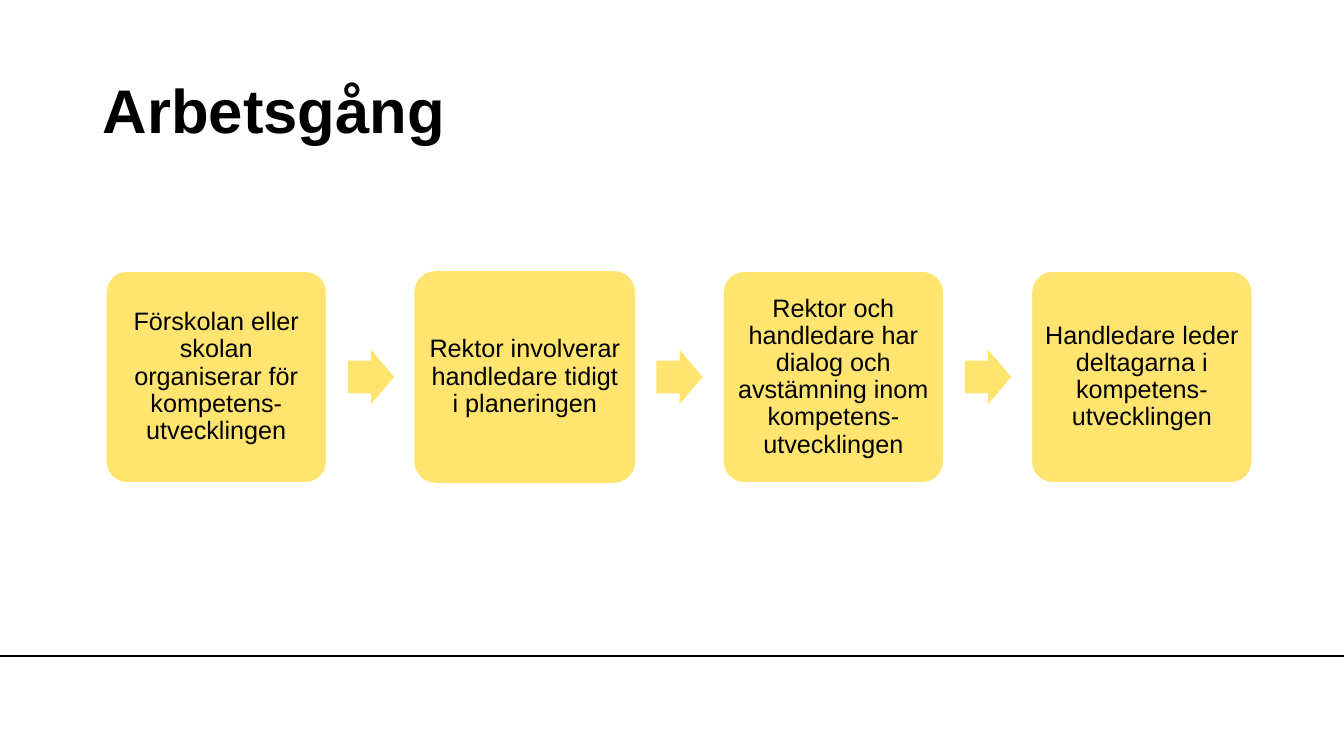
from dataclasses import dataclass

from lxml import etree
from pptx import Presentation
from pptx.dml.color import RGBColor
from pptx.enum import shapes, text
from pptx.oxml.ns import qn
from pptx.util import Inches, Pt


@dataclass(frozen=True)
class Theme:
    font: str = "Arial"
    ink: RGBColor = RGBColor(0x00, 0x00, 0x00)
    paper: RGBColor = RGBColor(0xFF, 0xFF, 0xFF)
    accent: RGBColor = RGBColor(0xFF, 0xE5, 0x6F)
    title_size: int = 44
    step_size: int = 18


class SlideBuilder:
    def __init__(self, slide, theme):
        self.slide = slide
        self.theme = theme

    def format_text(self, tf, size, align, bold=False):
        tf.word_wrap = True
        tf.auto_size = text.MSO_AUTO_SIZE.NONE
        tf.vertical_anchor = text.MSO_ANCHOR.MIDDLE
        for p in tf.paragraphs:
            p.alignment = align
            p.line_spacing = 0.9
            for r in p.runs:
                r.font.name = self.theme.font
                r.font.size = Pt(size)
                r.font.bold = bold
                r.font.color.rgb = self.theme.ink

    def title(self, words, x, y, w, h):
        sp = self.slide.shapes.title
        sp.left, sp.top, sp.width, sp.height = map(Inches, (x, y, w, h))
        sp.text_frame.text = words
        self.format_text(sp.text_frame, self.theme.title_size,
                         text.PP_ALIGN.LEFT, bold=True)

    def rule(self, x1, y1, x2, y2):
        line = self.slide.shapes.add_connector(
            shapes.MSO_CONNECTOR.STRAIGHT, *map(Inches, (x1, y1, x2, y2)))
        line.line.color.rgb = self.theme.ink
        line.line.width = Pt(1)
        etree.SubElement(line._element.spPr, qn("a:effectLst"))

    def shape(self, kind, x, y, w, h, adjustments):
        sp = self.slide.shapes.add_shape(kind, *map(Inches, (x, y, w, h)))
        for i, value in enumerate(adjustments):
            sp.adjustments[i] = value
        sp.shadow.inherit = False
        sp.fill.solid()
        sp.fill.fore_color.rgb = self.theme.accent
        sp.line.fill.background()
        return sp

    def step(self, words, x, y, w, h, outlined):
        sp = self.shape(shapes.MSO_SHAPE.ROUNDED_RECTANGLE, x, y, w, h, [0.1])
        if outlined:
            sp.line.color.rgb = self.theme.paper
            sp.line.width = Pt(1)
        tf = sp.text_frame
        tf.margin_left = tf.margin_right = Inches(0.07)
        tf.margin_top = tf.margin_bottom = Inches(0.07)
        tf.text = words
        self.format_text(tf, self.theme.step_size, text.PP_ALIGN.CENTER)

    def arrow(self, x, y, w, h):
        self.shape(shapes.MSO_SHAPE.RIGHT_ARROW, x, y, w, h, [0.6, 0.5])


# Each step: wording, white outline
STEPS = [
    ("Förskolan eller skolan organiserar för kompetens-utvecklingen", True),
    ("Rektor involverar handledare tidigt i planeringen", False),
    ("Rektor och handledare har dialog och avstämning inom "
     "kompetens-utvecklingen", True),
    ("Handledare leder deltagarna i kompetens-utvecklingen", True),
]


def main():
    prs = Presentation()
    prs.slide_width, prs.slide_height = Inches(13.33), Inches(7.5)
    slide = prs.slides.add_slide(prs.slide_layouts[5])
    builder = SlideBuilder(slide, Theme())

    # Footer rule and title
    builder.rule(0, 6.51, 13.33, 6.51)
    builder.title("Arbetsgång", 0.92, 0.4, 11.5, 1.45)

    # Process: equal steps with an arrow in each gap
    left, top, width, height, pitch = 1.05, 2.69, 2.19, 2.1, 3.06
    arrow_w, arrow_h = 0.46, 0.54
    for i, (words, outlined) in enumerate(STEPS):
        x = left + i * pitch
        builder.step(words, x, top, width, height, outlined)
        if i < len(STEPS) - 1:
            builder.arrow(x + width + 0.21, top + (height - arrow_h) / 2,
                          arrow_w, arrow_h)

    prs.save("out.pptx")


if __name__ == "__main__":
    main()
